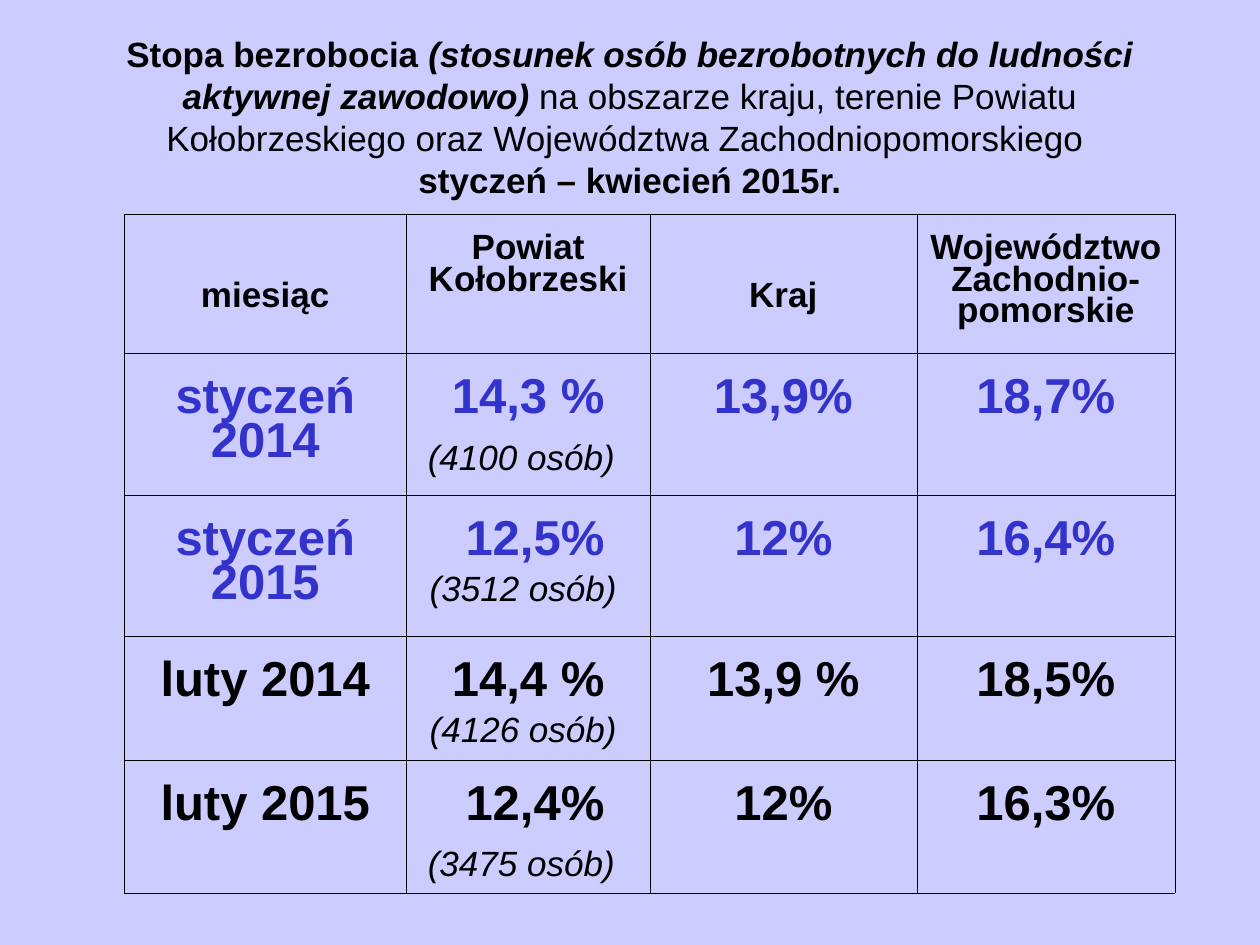
from dataclasses import dataclass

from lxml import etree
from pptx import Presentation
from pptx.dml.color import RGBColor
from pptx.enum.text import MSO_ANCHOR, MSO_AUTO_SIZE, PP_ALIGN
from pptx.oxml.ns import qn
from pptx.util import Pt

CENTER = PP_ALIGN.CENTER
MIDDLE, TOP = MSO_ANCHOR.MIDDLE, MSO_ANCHOR.TOP
NO_AUTOFIT = MSO_AUTO_SIZE.NONE

COLORS = {"background": "CCCCFF", "text": "000000", "january": "3333CC"}
FONT = "Arial"
TITLE_ONLY = 5

TABLE_LEFT, TABLE_TOP = 70.8, 122.4
COLUMN_WIDTHS = [161.5, 139, 152.6, 147.5]
ROW_HEIGHTS = [79.4, 81, 80.6, 70.8, 76]
OUTER_LINE, INNER_LINE = 0.23, 0.11
SIDE_MARGIN, BOTTOM_MARGIN = 7.2, 3.6
HEADER_MARGIN, LOWERED_HEADER_MARGIN, BODY_MARGIN = 11.5, 39, 14.4


@dataclass
class MonthRow:
    month: str
    county: str
    people: str
    country: str
    region: str
    color: str
    tail_size: float


HEADERS = [
    ("miesiąc", LOWERED_HEADER_MARGIN),
    ("Powiat Kołobrzeski", HEADER_MARGIN),
    ("Kraj", LOWERED_HEADER_MARGIN),
    ("Województwo Zachodnio-pomorskie", HEADER_MARGIN),
]

MONTHS = [
    MonthRow("styczeń 2014", "14,3 %", "(4100 osób)", "13,9%", "18,7%", "january", 28),
    MonthRow("styczeń 2015", " 12,5%", "(3512 osób)", "12%", "16,4%", "january", 20),
    MonthRow("luty 2014", "14,4 %", "(4126 osób)", "13,9 %", "18,5%", "text", 20),
    MonthRow("luty 2015", " 12,4%", "(3475 osób)", "12%", "16,3%", "text", 28),
]


def add_text(paragraph, text: str, *, size: float = 20, color: str = "text",
             bold: bool = False, italic: bool = False) -> None:
    run = paragraph.add_run()
    run.text = text
    run.font.name = FONT
    run.font.size = Pt(size)
    run.font.bold = bold
    run.font.italic = italic
    run.font.color.rgb = RGBColor.from_string(COLORS[color])


def format_cell_paragraph(paragraph, space_before: float) -> None:
    paragraph.alignment = CENTER
    paragraph.line_spacing = 0.81
    paragraph.space_before = Pt(space_before)


def format_cell(cell, row: int, column: int, top_margin: float) -> None:
    cell.margin_left = cell.margin_right = Pt(SIDE_MARGIN)
    cell.margin_top, cell.margin_bottom = Pt(top_margin), Pt(BOTTOM_MARGIN)
    cell.vertical_anchor = TOP
    on_edge = {
        "a:lnL": column == 0,
        "a:lnR": column == len(COLUMN_WIDTHS) - 1,
        "a:lnT": row == 0,
        "a:lnB": row == len(ROW_HEIGHTS) - 1,
    }
    properties = cell._tc.get_or_add_tcPr()
    for side, outer in on_edge.items():
        width = Pt(OUTER_LINE if outer else INNER_LINE)
        line = etree.SubElement(properties, qn(side), w=str(int(width)))
        fill = etree.SubElement(line, qn("a:solidFill"))
        etree.SubElement(fill, qn("a:srgbClr"), val=COLORS["text"])
    cell.fill.background()


def add_title(slide) -> None:
    title = slide.shapes.title
    title.left, title.top, title.width, title.height = Pt(36), Pt(21.6), Pt(648), Pt(90)
    frame = title.text_frame
    frame.word_wrap = True
    frame.auto_size = NO_AUTOFIT
    frame.vertical_anchor = MIDDLE
    paragraph = frame.paragraphs[0]
    paragraph.alignment = CENTER
    add_text(paragraph, "Stopa bezrobocia ", bold=True)
    add_text(paragraph, "(stosunek osób bezrobotnych do ludności aktywnej zawodowo)",
             bold=True, italic=True)
    add_text(paragraph, " na obszarze kraju, terenie Powiatu Kołobrzeskiego "
                        "oraz Województwa Zachodniopomorskiego ")
    paragraph.add_line_break()
    add_text(paragraph, "styczeń – kwiecień 2015r.", bold=True)


def add_header(table) -> None:
    for column, (label, top_margin) in enumerate(HEADERS):
        cell = table.cell(0, column)
        format_cell(cell, 0, column, top_margin)
        paragraph = cell.text_frame.paragraphs[0]
        format_cell_paragraph(paragraph, 5)
        add_text(paragraph, label, bold=True)


def add_month(table, row: int, entry: MonthRow) -> None:
    values = [entry.month, entry.county, entry.country, entry.region]
    for column, value in enumerate(values):
        cell = table.cell(row, column)
        format_cell(cell, row, column, BODY_MARGIN)
        paragraph = cell.text_frame.paragraphs[0]
        format_cell_paragraph(paragraph, 7)
        add_text(paragraph, value, size=28, color=entry.color, bold=True)
    people = table.cell(row, 1).text_frame.add_paragraph()
    format_cell_paragraph(people, 7)
    add_text(people, entry.people, italic=True)
    add_text(people, " ", size=entry.tail_size)


def add_rate_table(slide) -> None:
    table = slide.shapes.add_table(
        len(ROW_HEIGHTS), len(COLUMN_WIDTHS), Pt(TABLE_LEFT), Pt(TABLE_TOP),
        Pt(sum(COLUMN_WIDTHS)), Pt(sum(ROW_HEIGHTS))).table
    table.first_row = False
    table.horz_banding = False
    for column, width in zip(table.columns, COLUMN_WIDTHS):
        column.width = Pt(width)
    for row, height in zip(table.rows, ROW_HEIGHTS):
        row.height = Pt(height)
    add_header(table)
    for row, entry in enumerate(MONTHS, start=1):
        add_month(table, row, entry)


def main() -> None:
    presentation = Presentation()
    presentation.slide_width, presentation.slide_height = Pt(720), Pt(540)
    slide = presentation.slides.add_slide(presentation.slide_layouts[TITLE_ONLY])
    background = slide.background.fill
    background.solid()
    background.fore_color.rgb = RGBColor.from_string(COLORS["background"])
    add_title(slide)
    add_rate_table(slide)
    presentation.save("out.pptx")


if __name__ == "__main__":
    main()
